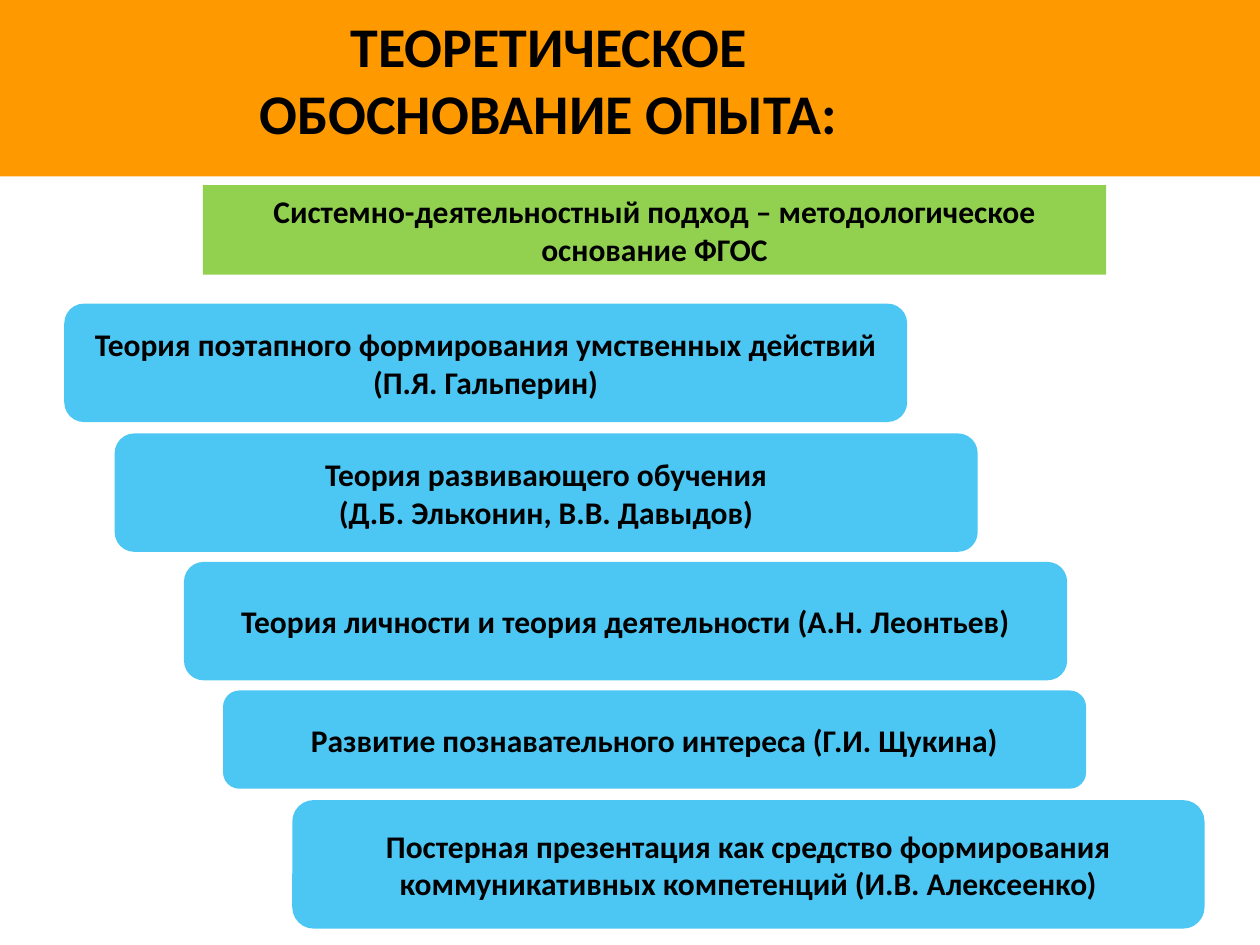
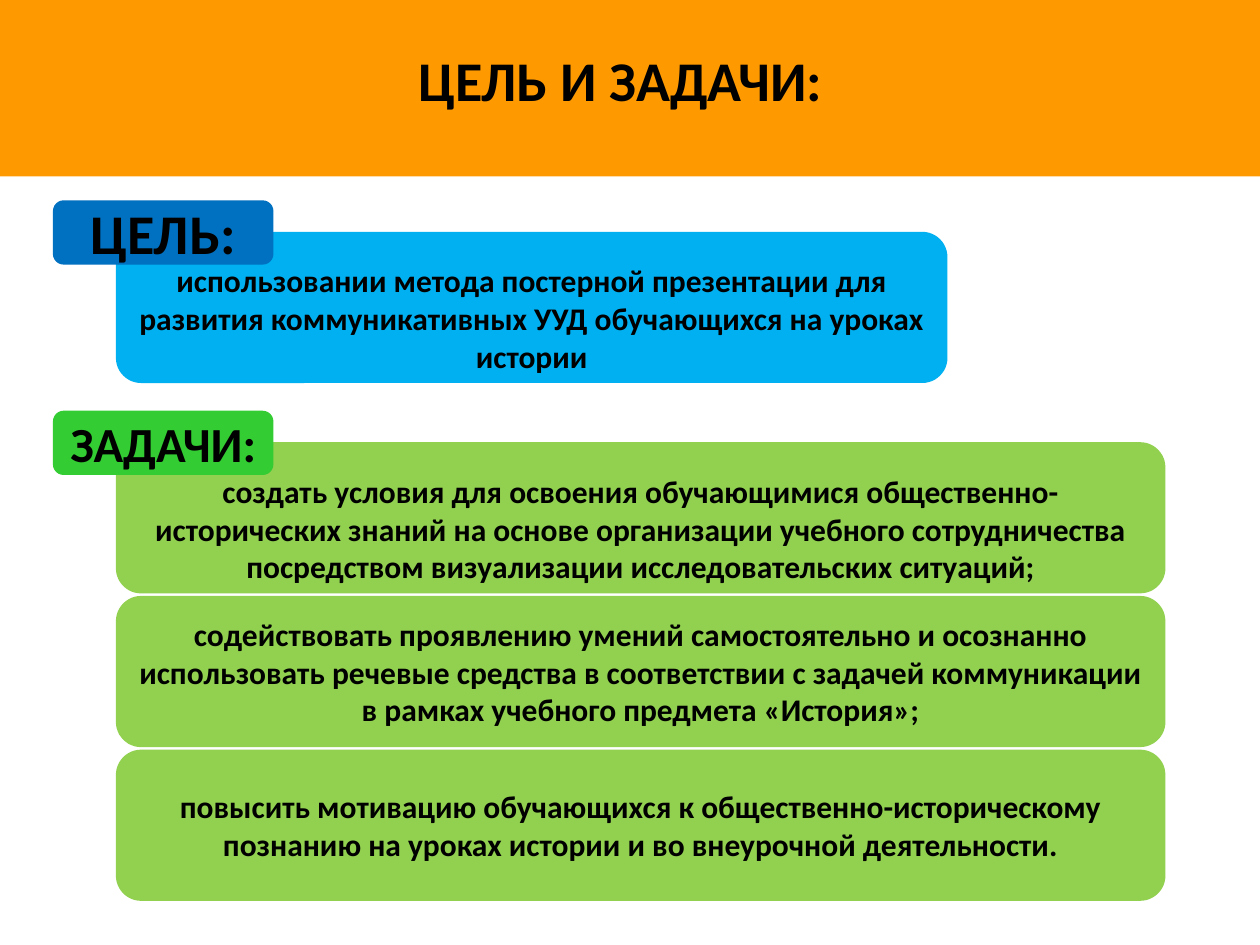
from lxml import etree
from pptx import Presentation
from pptx.dml.color import RGBColor
from pptx.enum.shapes import MSO_SHAPE
from pptx.enum.text import MSO_ANCHOR, PP_ALIGN
from pptx.oxml.ns import qn
from pptx.util import Inches, Pt

RECT = MSO_SHAPE.RECTANGLE
ROUND = MSO_SHAPE.ROUNDED_RECTANGLE
MIDDLE = MSO_ANCHOR.MIDDLE
CENTER = PP_ALIGN.CENTER

ORANGE = "FF9900"
BLUE = "00B0F0"
NAVY = "0070C0"
LIME = "92D050"
GREEN = "33CC33"
BLACK = "000000"
FONT = {"name": "Calibri", "bold": True}


def paint(color, tone):
    color.rgb = RGBColor.from_string(tone)


def add_box(slide, form, place, fill=None, lines=(), size=18, alpha=None, drop=0):
    spot = [Inches(n) for n in place]
    if form is None:
        box = slide.shapes.add_textbox(*spot)
    else:
        box = slide.shapes.add_shape(form, *spot)
        box.shadow.inherit = False
        box.line.fill.background()
        box.fill.solid()
        paint(box.fill.fore_color, fill)
    if alpha:
        tone = box.fill._xPr.find(".//" + qn("a:srgbClr"))
        etree.SubElement(tone, qn("a:alpha"), val=str(alpha * 1000))
    frame = box.text_frame
    frame.word_wrap = True
    frame.vertical_anchor = MIDDLE
    frame.margin_top = Inches(0.05 + drop)
    for i, line in enumerate(lines):
        para = frame.add_paragraph() if i else frame.paragraphs[0]
        para.alignment = CENTER
        run = para.add_run()
        run.text = line
        for key, value in FONT.items():
            setattr(run.font, key, value)
        run.font.size = Pt(size)
        paint(run.font.color, BLACK)


deck = Presentation()
deck.slide_width = Inches(10)
deck.slide_height = Inches(7.5)

heads = [
    (0.91, ["ТЕОРЕТИЧЕСКОЕ", "ОБОСНОВАНИЕ ОПЫТА:"]),
    (1.48, ["ЦЕЛЬ И ЗАДАЧИ:"]),
]
pages = []
for left, title in heads:
    page = deck.slides.add_slide(deck.slide_layouts[6])
    add_box(page, RECT, (0, 0, 10, 1.4), ORANGE)
    add_box(page, None, (left, 0, 6.89, 1.25), lines=title, size=32)
    pages.append(page)
theory, goals = pages

steps = [
    (0.51, 2.41, 6.69, 0.94, ["Теория поэтапного формирования умственных действий (П.Я. Гальперин)"]),
    (0.91, 3.44, 6.85, 0.94, ["Теория развивающего обучения", "(Д.Б. Эльконин, В.В. Давыдов)"]),
    (1.46, 4.46, 7.01, 0.94, ["Теория личности и теория деятельности (А.Н. Леонтьев)"]),
    (1.77, 5.48, 6.85, 0.78, ["Развитие познавательного интереса (Г.И. Щукина)"]),
    (2.32, 6.35, 7.24, 1.02, [
        "Постерная презентация как средство формирования "
        "коммуникативных компетенций (И.В. Алексеенко)"]),
]
for *place, lines in steps:
    add_box(theory, ROUND, place, BLUE, lines, alpha=70)
add_box(theory, RECT, (1.61, 1.47, 7.17, 0.71), LIME,
        ["Системно-деятельностный подход – методологическое основание ФГОС"])

tasks = [
    "создать условия для освоения обучающимися общественно-исторических знаний "
    "на основе организации учебного сотрудничества посредством визуализации "
    "исследовательских ситуаций;",
    "содействовать проявлению умений самостоятельно и осознанно использовать "
    "речевые средства в соответствии с задачей коммуникации в рамках учебного "
    "предмета «История»;",
    "повысить мотивацию обучающихся к общественно-историческому познанию "
    "на уроках истории и во внеурочной деятельности.",
]
aim = ("использовании метода постерной презентации для развития "
       "коммуникативных УУД обучающихся на уроках истории")
groups = [
    (1.84, 6.6, BLUE, [aim], "ЦЕЛЬ:", NAVY, 32),
    (3.51, 8.33, LIME, tasks, "ЗАДАЧИ:", GREEN, 28),
]
for top, width, fill, texts, label, tone, size in groups:
    for i, text in enumerate(texts):
        place = (0.92, top + i * 1.22, width, 1.2)
        add_box(goals, ROUND, place, fill, [text], drop=0 if i else 0.17)
    add_box(goals, ROUND, (0.42, top - 0.25, 1.75, 0.51), tone, [label], size)

deck.save("out.pptx")
